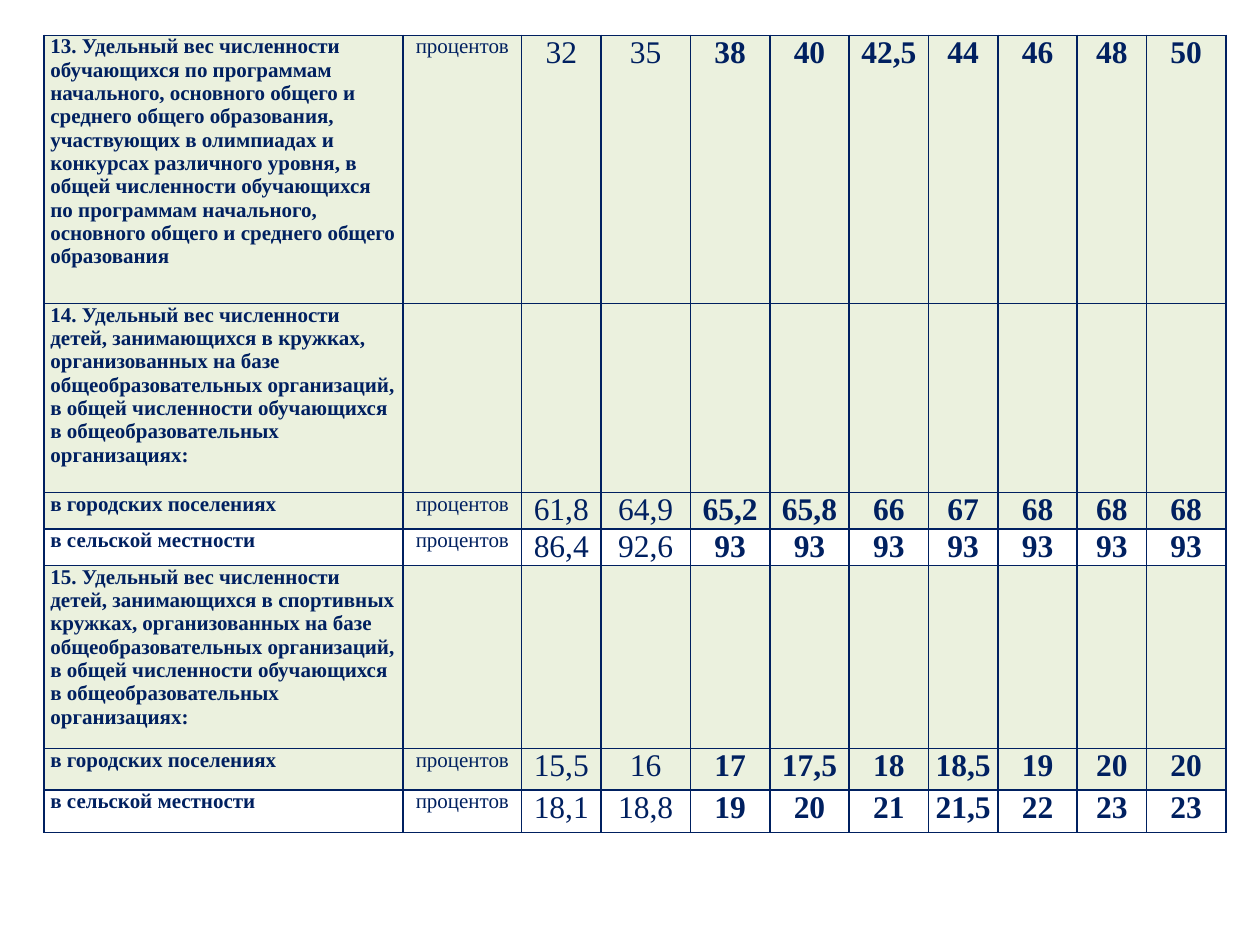
"""Build a slide with a table of education indicators."""
from lxml.etree import SubElement
from pptx import Presentation
from pptx.dml.color import RGBColor
from pptx.enum.text import PP_ALIGN
from pptx.oxml.ns import qn
from pptx.util import Inches, Pt

NAVY = RGBColor(0x00, 0x20, 0x60)
PALE_GREEN = RGBColor(0xEB, 0xF1, 0xDE)
FONT = "Times New Roman"
UNIT = "процентов"
URBAN = "в городских поселениях"
RURAL = "в сельской местности"
COLUMN_WIDTHS = [2.85, 0.94, 0.63, 0.71, 0.63, 0.63, 0.63, 0.55, 0.63, 0.55, 0.63]
FIRST_BOLD_COLUMN = 4

ROWS = [
    (2.13, "13. Удельный вес численности обучающихся по программам начального, "
     "основного общего и среднего общего образования, участвующих в олимпиадах и "
     "конкурсах различного уровня, в общей численности обучающихся по программам "
     "начального, основного общего и среднего общего образования",
     "32 35 38 40 42,5 44 46 48 50"),
    (1.5, "14. Удельный вес численности детей, занимающихся в кружках, "
     "организованных на базе общеобразовательных организаций, в общей численности "
     "обучающихся в общеобразовательных организациях:", ""),
    (0.29, URBAN, "61,8 64,9 65,2 65,8 66 67 68 68 68"),
    (0.29, RURAL, "86,4 92,6 93 93 93 93 93 93 93"),
    (1.45, "15. Удельный вес численности детей, занимающихся в спортивных кружках, "
     "организованных на базе общеобразовательных организаций, в общей численности "
     "обучающихся в общеобразовательных организациях:", ""),
    (0.33, URBAN, "15,5 16 17 17,5 18 18,5 19 20 20"),
    (0.34, RURAL, "18,1 18,8 19 20 21 21,5 22 23 23"),
]


def write_text(cell, text, size=12, bold=False, align=PP_ALIGN.CENTER):
    """Write formatted text into a cell."""
    cell.margin_left = cell.margin_right = Inches(0.05)
    cell.margin_top = cell.margin_bottom = 0
    paragraph = cell.text_frame.paragraphs[0]
    paragraph.alignment = align
    paragraph.font.size = Pt(size)
    if text:
        run = paragraph.add_run()
        run.text = text
        run.font.name = FONT
        run.font.size = Pt(size)
        run.font.bold = bold
        run.font.color.rgb = NAVY


def draw_borders(cell):
    """Outline all four sides of a cell."""
    properties = cell._tc.get_or_add_tcPr()
    for side in ("a:lnL", "a:lnR", "a:lnT", "a:lnB"):
        line = SubElement(properties, qn(side), w=str(Pt(1)))
        fill = SubElement(line, qn("a:solidFill"))
        SubElement(fill, qn("a:srgbClr"), val=str(NAVY))


def paint_cell(cell, color):
    """Fill a cell with a colour, or leave it clear when there is none."""
    if color is None:
        cell.fill.background()
    else:
        cell.fill.solid()
        cell.fill.fore_color.rgb = color


def fill_row(table, index, label, numbers):
    """Write and style one table row."""
    values = [UNIT, *numbers.split()] if numbers else [""] * (len(COLUMN_WIDTHS) - 1)
    color = None if label == RURAL else PALE_GREEN
    for column, text in enumerate([label, *values]):
        cell = table.cell(index, column)
        draw_borders(cell)
        paint_cell(cell, color)
        if column == 0:
            write_text(cell, text, bold=True, align=PP_ALIGN.LEFT)
        elif column == 1:
            write_text(cell, text)
        else:
            write_text(cell, text, size=18, bold=column >= FIRST_BOLD_COLUMN)


def add_indicator_table(slide):
    """Add the table of indicators."""
    height = sum(row[0] for row in ROWS)
    table = slide.shapes.add_table(
        len(ROWS), len(COLUMN_WIDTHS), Inches(0.35), Inches(0.28),
        Inches(sum(COLUMN_WIDTHS)), Inches(height)).table
    table.first_row = table.horz_banding = False
    for column, width in zip(table.columns, COLUMN_WIDTHS):
        column.width = Inches(width)
    for index, (row_height, label, numbers) in enumerate(ROWS):
        table.rows[index].height = Inches(row_height)
        fill_row(table, index, label, numbers)


def main():
    """Create and save the presentation."""
    presentation = Presentation()
    presentation.slide_width = Inches(10)
    presentation.slide_height = Inches(7.5)
    slide = presentation.slides.add_slide(presentation.slide_layouts[6])
    add_indicator_table(slide)
    presentation.save("out.pptx")


if __name__ == "__main__":
    main()
